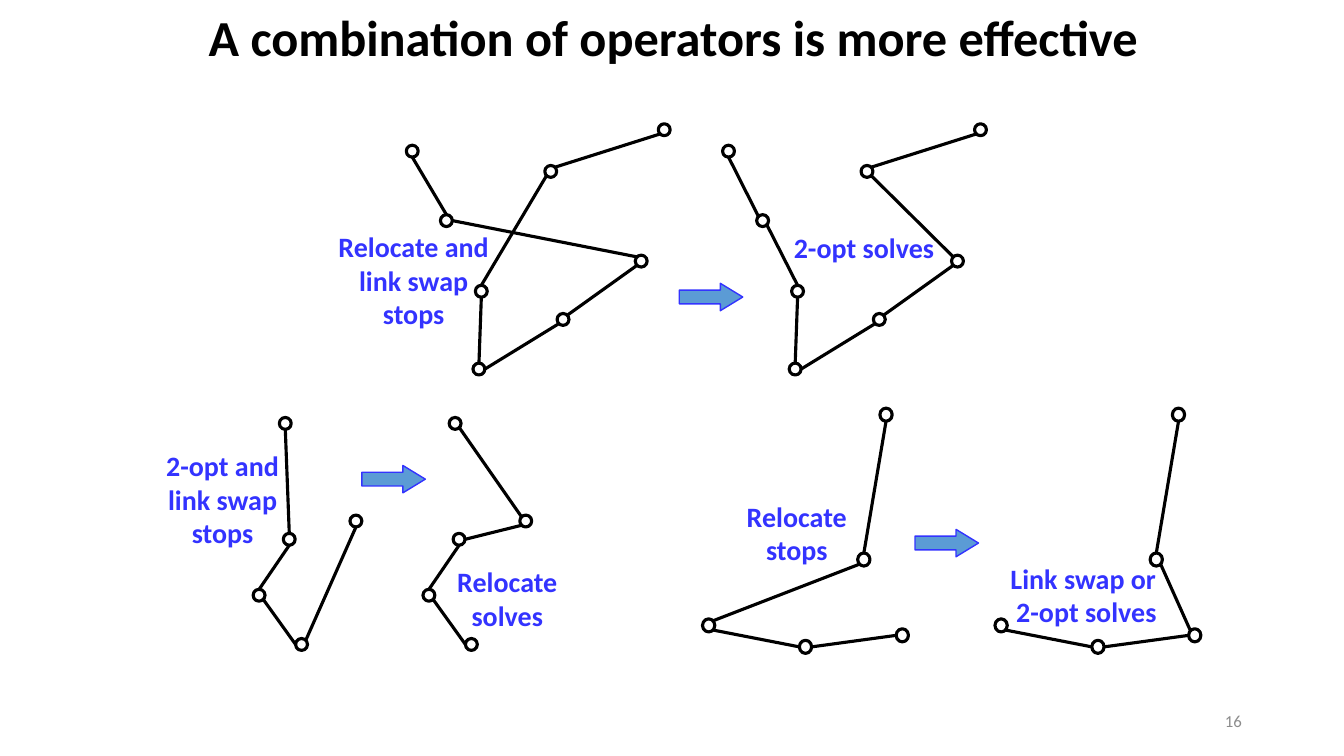
from dataclasses import dataclass
from math import sqrt

from lxml import etree
from pptx import Presentation, util as u
from pptx.dml.color import RGBColor
from pptx.enum import shapes, text
from pptx.oxml import ns


@dataclass(frozen=True)
class Theme:
    font: str = "Calibri"
    ink: str = "000000"
    accent: str = "3333FF"
    arrow: str = "5B9BD5"
    muted: str = "8C8C8C"
    title_size: int = 36
    label_size: int = 20
    number_size: int = 12
    route_width: float = 2.25
    arrow_width: float = 1


THEME = Theme()

# Content: all lengths in centimetres
TITLE = ("A combination of operators is more effective ", (1.17, 0.03, 31.9, 1.8))
PAGE_NUMBER = ("16", (23.93, 17.65, 7.62, 1.02))
ARROW_SIZE = (1.6, 0.69)

# Stops are circle centres; each link joins "stop side" to "stop side".
# The improved tour ("after") repeats the stops, moved right by "shift".
EXAMPLES = [
    {
        "stops": {"A": (10.39, 3.81), "B": (11.25, 5.56), "C": (12.13, 7.34),
                  "D": (12.07, 9.3), "E": (14.19, 8.05), "F": (16.16, 6.58),
                  "G": (13.88, 4.32), "H": (16.74, 3.27)},
        "stop_size": (0.3, 0.3),
        "shift": 7.97,
        "before": ["A S-B N", "B E-F NW", "F SW-E NE", "E SW-D E",
                   "D N-C S", "C N-G SW", "G NE-H SW"],
        "after": ["A S-B NW", "B SE-C N", "C S-D N", "D E-E SW",
                  "E NE-F SW", "F NW-G SE", "G NE-H SW"],
        "arrow": (17.12, 7.14),
        "labels": [(["Relocate and link swap stops"], (8.23, 5.66, 4.39, 2.82)),
                   (["2-opt solves"], (19.58, 5.69, 4.39, 1.12))],
    },
    {
        "stops": {"A": (22.33, 10.45), "B": (21.77, 14.1), "C": (17.86, 15.76),
                  "D": (20.3, 16.3), "E": (22.74, 16.01)},
        "stop_size": (0.31, 0.33),
        "shift": 7.37,
        "before": ["A S-B N", "B SW-C NE", "C SE-D W", "D E-E W"],
        "after": ["A S-B N", "B SE-E NW", "C SE-D W", "D E-E W"],
        "arrow": (23.06, 13.34),
        "labels": [(["Relocate stops"], (17.73, 12.45, 4.7, 1.96)),
                   (["Link swap or ", "2-opt solves"], (24.51, 14.02, 5.74, 1.96))],
    },
    {
        "stops": {"A": (7.19, 10.67), "B": (7.29, 13.59), "C": (6.53, 15),
                  "D": (7.6, 16.24), "E": (8.97, 13.13)},
        "stop_size": (0.3, 0.3),
        "shift": 4.28,
        "before": ["A S-B N", "B S-C N", "C SE-D W", "D NE-E S"],
        "after": ["A SE-E NW", "E SW-B E", "B S-C N", "C SE-D W"],
        "arrow": (9.12, 11.73),
        "labels": [(["2-opt and link swap stops"], (3.73, 11.18, 3.76, 2.82)),
                   (["Relocate solves"], (10.74, 14.1, 4.09, 1.96))],
    },
]

DIAGONAL = sqrt(0.5)
SIDES = {"N": (0, -1), "S": (0, 1), "E": (1, 0), "W": (-1, 0),
         "NE": (DIAGONAL, -DIAGONAL), "NW": (-DIAGONAL, -DIAGONAL),
         "SE": (DIAGONAL, DIAGONAL), "SW": (-DIAGONAL, DIAGONAL)}


def cm(values):
    return [u.Cm(value) for value in values]


def apply(target, formats):
    for name, value in formats.items():
        setattr(target, name, value)


def write(box, lines, size, color, bold, align, anchor):
    frame = box.text_frame
    apply(frame, {"word_wrap": True, "auto_size": text.MSO_AUTO_SIZE.NONE,
                  "vertical_anchor": anchor})
    for index, line in enumerate(lines):
        para = frame.add_paragraph() if index else frame.paragraphs[0]
        para.alignment = align
        span = para.add_run()
        span.text = line
        apply(span.font, {"name": THEME.font, "size": u.Pt(size), "bold": bold})
        span.font.color.rgb = RGBColor.from_string(color)


def outline(shape, color, width):
    shape.line.color.rgb = RGBColor.from_string(color)
    shape.line.width = u.Pt(width)


def draw_tour(page, stops, size, links):
    width, height = size

    def edge_point(end):
        stop, side = end.split()
        (x, y), (dx, dy) = stops[stop], SIDES[side]
        return cm((x + dx * width / 2, y + dy * height / 2))

    for link in links:
        start, finish = link.split("-")
        line = page.shapes.add_connector(
            shapes.MSO_CONNECTOR.STRAIGHT, *edge_point(start), *edge_point(finish))
        outline(line, THEME.ink, THEME.route_width)
        etree.SubElement(line._element.spPr, ns.qn("a:effectLst"))

    for x, y in stops.values():
        circle = page.shapes.add_shape(
            shapes.MSO_SHAPE.OVAL, *cm((x - width / 2, y - height / 2, width, height)))
        circle.shadow.inherit = False
        circle.fill.background()
        outline(circle, THEME.ink, THEME.route_width)


def draw_arrow(page, corner):
    arrow = page.shapes.add_shape(shapes.MSO_SHAPE.RIGHT_ARROW, *cm(corner + ARROW_SIZE))
    arrow.shadow.inherit = False
    arrow.adjustments[0], arrow.adjustments[1] = 0.5, 0.82
    arrow.fill.solid()
    arrow.fill.fore_color.rgb = RGBColor.from_string(THEME.arrow)
    outline(arrow, THEME.accent, THEME.arrow_width)


def main():
    deck = Presentation()
    apply(deck, {"slide_width": u.Cm(33.87), "slide_height": u.Cm(19.05)})
    page = deck.slides.add_slide(deck.slide_layouts[5])
    align, anchor = text.PP_ALIGN, text.MSO_ANCHOR

    # Title
    title, place = TITLE
    box = page.shapes.title
    apply(box, dict(zip(("left", "top", "width", "height"), cm(place))))
    write(box, [title], THEME.title_size, THEME.ink, True, align.CENTER, anchor.TOP)

    # Before and after tours, with arrows and labels
    for example in EXAMPLES:
        stops, size = example["stops"], example["stop_size"]
        moved = {name: (x + example["shift"], y) for name, (x, y) in stops.items()}
        draw_tour(page, stops, size, example["before"])
        draw_tour(page, moved, size, example["after"])
        draw_arrow(page, example["arrow"])
        for lines, place in example["labels"]:
            box = page.shapes.add_textbox(*cm(place))
            write(box, lines, THEME.label_size, THEME.accent, True,
                  align.CENTER, anchor.TOP)

    # Page number
    number, place = PAGE_NUMBER
    box = page.shapes.add_textbox(*cm(place))
    write(box, [number], THEME.number_size, THEME.muted, False,
          align.RIGHT, anchor.MIDDLE)

    deck.save("out.pptx")


if __name__ == "__main__":
    main()
